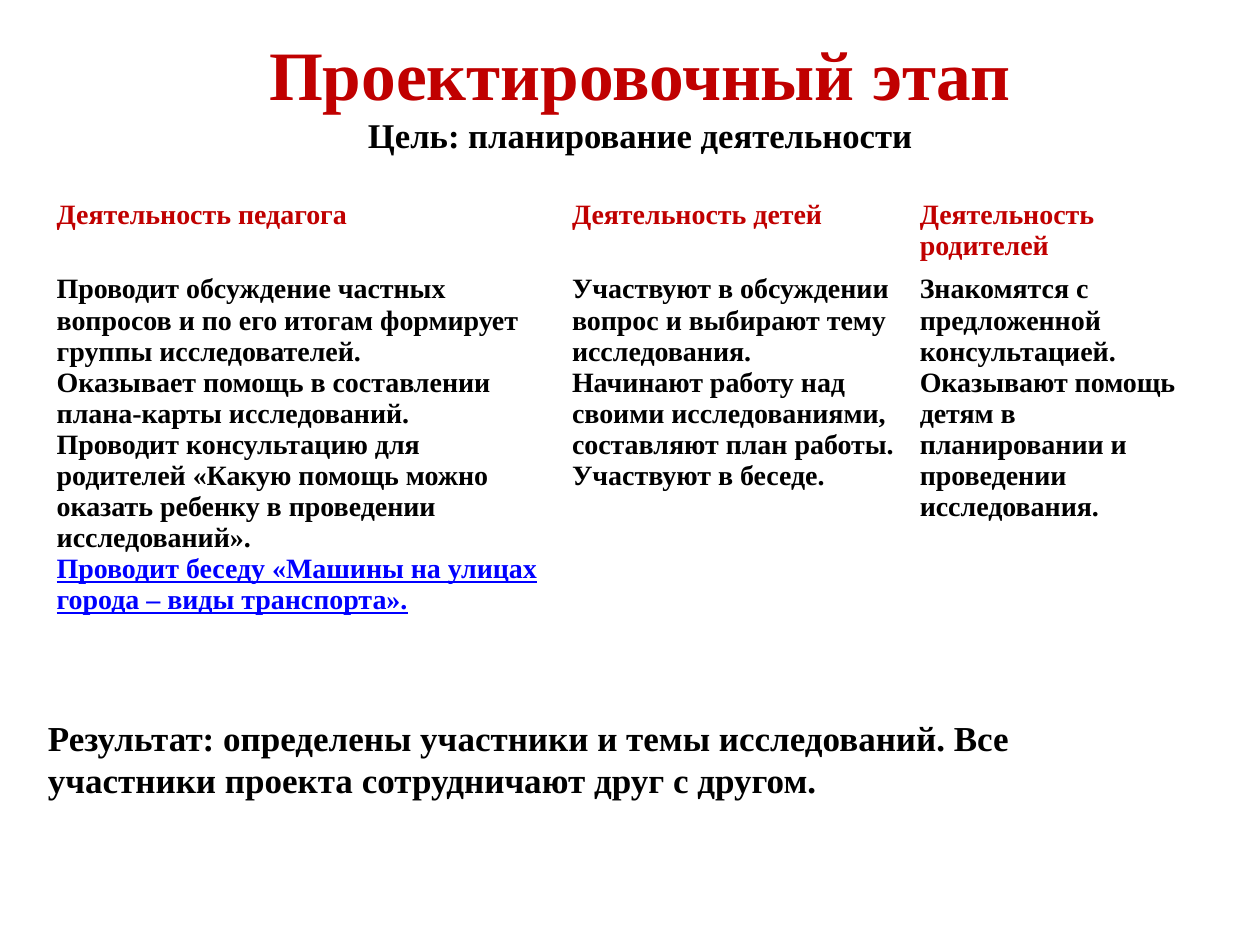
from lxml import etree
from pptx import Presentation
from pptx.dml.color import RGBColor
from pptx.enum.text import MSO_ANCHOR, MSO_AUTO_SIZE, PP_ALIGN
from pptx.oxml.ns import qn
from pptx.util import Inches, Pt

CENTER, LEFT = PP_ALIGN.CENTER, PP_ALIGN.LEFT
MIDDLE, TOP = MSO_ANCHOR.MIDDLE, MSO_ANCHOR.TOP
NO_AUTOFIT = MSO_AUTO_SIZE.NONE

FONT = "Times New Roman"
COLORS = {"accent": "C00000", "text": "000000", "link": "0000FF", "border": "FFFFFF"}

COLUMN_WIDTHS = (4.09, 2.76, 2.36)
ROW_HEIGHTS = (0.54, 3.26)
HEADERS = ("Деятельность педагога", "Деятельность детей", "Деятельность родителей")
ACTIVITIES = (
    (
        "Проводит обсуждение частных вопросов и по его итогам формирует группы исследователей.",
        "Оказывает помощь в составлении плана-карты исследований.",
        "Проводит консультацию для родителей «Какую помощь можно оказать ребенку "
        "в проведении исследований».",
        "Проводит беседу «Машины на улицах города – виды транспорта».",
    ),
    (
        "Участвуют в обсуждении вопрос и выбирают тему исследования.",
        "Начинают работу над своими исследованиями, составляют план работы.",
        "Участвуют в беседе.",
    ),
    (
        "Знакомятся с предложенной консультацией.",
        "Оказывают помощь детям в планировании и проведении исследования.",
    ),
)
HIGHLIGHTED = ACTIVITIES[0][-1]


def add_run(paragraph, text, size, color, underline=False):
    run = paragraph.add_run()
    run.text = text
    font = run.font
    font.name, font.size, font.bold = FONT, Pt(size), True
    font.underline = underline
    font.color.rgb = RGBColor.from_string(COLORS[color])


def place(placeholder, left, top, width, height, anchor, alignment):
    """Move a placeholder and return its first paragraph, ready for runs."""
    placeholder.left, placeholder.top = Inches(left), Inches(top)
    placeholder.width, placeholder.height = Inches(width), Inches(height)
    frame = placeholder.text_frame
    frame.word_wrap = True
    frame.auto_size = NO_AUTOFIT
    frame.vertical_anchor = anchor
    paragraph = frame.paragraphs[0]
    paragraph.alignment = alignment
    paragraph.space_before = Pt(0)
    return paragraph


def set_borders(cell, bottom_width):
    properties = cell._tc.get_or_add_tcPr()
    widths = {"lnL": 1, "lnR": 1, "lnT": 1, "lnB": bottom_width}
    for position, (side, width) in enumerate(widths.items()):
        line = etree.Element(qn(f"a:{side}"), w=str(Pt(width)))
        fill = etree.SubElement(line, qn("a:solidFill"))
        etree.SubElement(fill, qn("a:srgbClr"), val=COLORS["border"])
        properties.insert(position, line)


def fill_cell(cell, lines, color, bottom_width):
    cell.fill.background()
    set_borders(cell, bottom_width)
    frame = cell.text_frame
    for index, line in enumerate(lines):
        paragraph = frame.add_paragraph() if index else frame.paragraphs[0]
        highlighted = line == HIGHLIGHTED
        add_run(paragraph, line, 16, "link" if highlighted else color, highlighted)


def add_activity_table(slide):
    frame = slide.shapes.add_table(
        len(ROW_HEIGHTS), len(COLUMN_WIDTHS), Inches(0.35), Inches(1.53),
        Inches(sum(COLUMN_WIDTHS)), Inches(sum(ROW_HEIGHTS)))
    table = frame.table
    table.horz_banding = False
    for row, height in zip(table.rows, ROW_HEIGHTS):
        row.height = Inches(height)
    for index, width in enumerate(COLUMN_WIDTHS):
        table.columns[index].width = Inches(width)
        fill_cell(table.cell(0, index), [HEADERS[index]], "accent", 3)
        fill_cell(table.cell(1, index), ACTIVITIES[index], "text", 1)


def main():
    presentation = Presentation()
    presentation.slide_width, presentation.slide_height = Inches(10), Inches(7.5)
    slide = presentation.slides.add_slide(presentation.slide_layouts[0])

    heading = place(slide.shapes.title, 0.83, 0.29, 8.5, 0.9, MIDDLE, CENTER)
    add_run(heading, "Проектировочный этап", 39.6, "accent")
    heading.add_line_break()
    add_run(heading, "Цель: планирование деятельности", 19.8, "text")

    result = place(slide.placeholders[1], 0.28, 5.64, 8.74, 1.1, TOP, LEFT)
    add_run(result, "Результат: определены участники и темы исследований. "
            "Все участники проекта сотрудничают друг с другом.", 20, "text")

    add_activity_table(slide)
    presentation.save("out.pptx")


if __name__ == "__main__":
    main()
